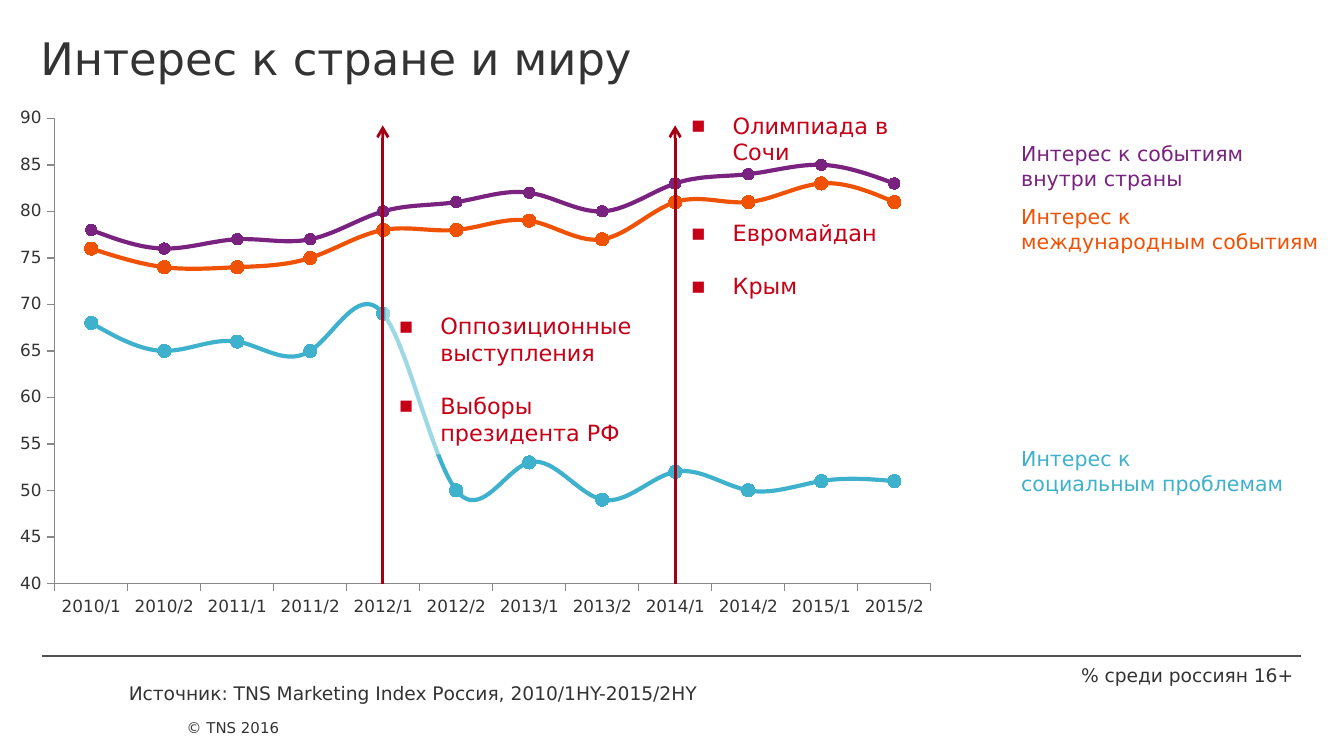
from collections import namedtuple

from lxml.etree import SubElement
from pptx import Presentation
from pptx.chart.data import CategoryChartData
from pptx.dml.color import RGBColor
from pptx.enum.chart import XL_CHART_TYPE as ChartType, XL_MARKER_STYLE as Marker, XL_TICK_MARK as Tick
from pptx.enum.shapes import MSO_CONNECTOR as Connector, MSO_SHAPE as Preset
from pptx.enum.text import MSO_ANCHOR as Anchor, PP_ALIGN as Align
from pptx.oxml import parse_xml
from pptx.oxml.ns import nsdecls, qn
from pptx.util import Inches, Pt

# The grid has 100 columns and 56.25 rows of square cells (16:9).
CELL = Inches(0.1)
COLUMNS, ROWS = 100, 56.25
FONT = "DejaVu Sans"
INK, GREY, AXIS = "333333", "525252", "888888"
PURPLE, ORANGE, BLUE = "7A2280", "EF5205", "3EB1CC"
ARROW_RED, NOTE_RED = "A40014", "C50017"

Box = namedtuple("Box", "left top width height")
Series = namedtuple("Series", "name values color marker_size")

PERIODS = [f"{year}/{half}" for year in range(2010, 2016) for half in (1, 2)]
SERIES = [
    Series("Series 1", (78, 76, 77, 77, 80, 81, 82, 80, 83, 84, 85, 83), PURPLE, 6),
    Series("Series 2", (76, 74, 74, 75, 78, 78, 79, 77, 81, 81, 83, 81), ORANGE, 7),
    Series("Series 3", (68, 65, 66, 65, 69, 50, 53, 49, 52, 50, 51, 51), BLUE, 7),
]
PLOT = Box(0.037, 0.039, 0.961, 0.892)  # shares of the chart box


def cells(*counts):
    return [round(count * CELL) for count in counts]


def rgb(color):
    return RGBColor.from_string(color)


def inside(box, share):
    """Box that takes the given shares of another box."""
    return Box(box.left + share.left * box.width, box.top + share.top * box.height,
               share.width * box.width, share.height * box.height)


def add_text(page, box, lines, size=10, color=INK, align=Align.LEFT, anchor=Anchor.TOP,
             wrap=True, insets=(1, 0.5, 1, 0.5), bullet=None, gaps=(), veil=None):
    """Text in a box; gaps are points before each line, veil is a fill's (color, opacity)."""
    if veil:
        shape = page.shapes.add_shape(Preset.RECTANGLE, *cells(*box))
        shape.shadow.inherit = False
        shape.line.fill.background()
        shape.fill.solid()
        shape.fill.fore_color.rgb = rgb(veil[0])
        fill = shape.fill._xPr.find(qn("a:solidFill"))
        SubElement(fill[0], qn("a:alpha"), val=str(veil[1] * 1000))
    else:
        shape = page.shapes.add_textbox(*cells(*box))
    frame = shape.text_frame
    frame.word_wrap = wrap
    frame.vertical_anchor = anchor
    (frame.margin_left, frame.margin_top,
     frame.margin_right, frame.margin_bottom) = cells(*insets)
    for index, line in enumerate(lines):
        para = frame.add_paragraph() if index else frame.paragraphs[0]
        para.alignment = align
        if gaps and gaps[index]:
            para.space_before = Pt(gaps[index])
        if bullet:
            props = para._p.get_or_add_pPr()
            indent = cells(3.1)[0]
            props.set("marL", str(indent))
            props.set("indent", str(-indent))
            SubElement(props, qn("a:buFont"), typeface=FONT)
            SubElement(props, qn("a:buChar"), char=bullet)
        span = para.add_run()
        span.text = line
        span.font.name, span.font.size = FONT, Pt(size)
        span.font.color.rgb = rgb(color)


def add_line(page, start, end, color, width, arrow=False):
    line = page.shapes.add_connector(Connector.STRAIGHT, *cells(*start, *end))
    line.line.color.rgb = rgb(color)
    line.line.width = Pt(width)
    if arrow:
        SubElement(line.line._get_or_add_ln(), qn("a:tailEnd"), type="arrow")
    SubElement(line._element.spPr, qn("a:effectLst"))


def style_axis(axis):
    axis.has_major_gridlines = False
    axis.major_tick_mark, axis.minor_tick_mark = Tick.OUTSIDE, Tick.NONE
    axis.format.line.color.rgb = rgb(AXIS)
    axis.format.line.width = Pt(0.75)
    font = axis.tick_labels.font
    font.name, font.size = FONT, Pt(9)
    font.color.rgb = rgb(INK)


def add_interest_chart(page, box):
    data = CategoryChartData(number_format="General")
    data.categories = PERIODS
    for series in SERIES:
        data.add_series(series.name, series.values)
    chart = page.shapes.add_chart(ChartType.LINE_MARKERS, *cells(*box), data).chart
    chart.has_legend = chart.has_title = False
    chart.font.name, chart.font.size = FONT, Pt(18)
    chart.font.color.rgb = rgb(INK)
    for axis in (chart.category_axis, chart.value_axis):
        style_axis(axis)
    scale = chart.value_axis
    scale.minimum_scale, scale.maximum_scale, scale.major_unit = 40, 90, 5

    plot = chart.plots[0]
    plot.vary_by_categories = False
    for drawn, series in zip(plot.series, SERIES):
        drawn.smooth = True
        drawn.format.line.color.rgb = rgb(series.color)
        drawn.format.line.width = Pt(2.25)
        drawn.marker.style, drawn.marker.size = Marker.CIRCLE, series.marker_size
        drawn.marker.format.fill.solid()
        drawn.marker.format.fill.fore_color.rgb = rgb(series.color)
        drawn.marker.format.line.color.rgb = rgb(series.color)

    area = chart._chartSpace.chart.plotArea
    for old in area.findall(qn("c:layout")):
        area.remove(old)
    sides = "".join(f'<c:{side} val="{share}"/>' for side, share in zip("xywh", PLOT))
    area.insert(0, parse_xml(
        f'<c:layout {nsdecls("c")}><c:manualLayout><c:layoutTarget val="inner"/>'
        f'<c:xMode val="edge"/><c:yMode val="edge"/>{sides}</c:manualLayout></c:layout>'))


def add_event(page, plot, period, notes, row, size, gaps, veil=None):
    """Arrow at a period of the plot, with a bulleted note on its right."""
    slot = plot.width / len(PERIODS)
    column = plot.left + (PERIODS.index(period) + 0.5) * slot
    add_line(page, (column, plot.top + plot.height),
             (column, plot.top + 0.015 * plot.height), ARROW_RED, 1.5, arrow=True)
    add_text(page, Box(column + 0.2, plot.top + row, *size), notes,
             size=12, color=NOTE_RED, bullet="▪", gaps=gaps, veil=veil)


def add_series_labels(page, box):
    labels = [
        (0, ["Интерес к событиям внутри страны"], PURPLE),
        (4.7, ["Интерес к", "международным событиям"], ORANGE),
        (22.7, ["Интерес к", "социальным проблемам"], BLUE),
    ]
    for row, lines, color in labels:
        width = box.width if len(lines) > 1 else 0.91 * box.width
        add_text(page, Box(box.left, box.top + row, width, 4.7), lines, size=11, color=color)


def add_footer(page, box):
    add_line(page, (box.left, box.top), (box.left + box.width, box.top), GREY, 0.75)
    add_text(page, Box(box.left + 9.8, box.top + 4.1, 9.1, 2.4), ["© TNS 2016"],
             size=8, anchor=Anchor.BOTTOM, wrap=False)
    add_text(page, Box(box.left + 5.5, box.top + 0.8, 60.8, 4),
             ["Источник: TNS Marketing Index Россия, 2010/1HY-2015/2HY"], anchor=Anchor.MIDDLE)
    add_text(page, Box(box.left + 76.1, box.top + 0.1, 18, 2.7),
             ["% среди россиян 16+"], align=Align.RIGHT, wrap=False)


def main():
    deck = Presentation()
    deck.slide_width, deck.slide_height = cells(COLUMNS, ROWS)
    page = deck.slides.add_slide(deck.slide_layouts[6])

    add_text(page, Box(0, 0, COLUMNS, 8.9), ["Интерес к стране и миру"],
             size=24, insets=(3, 2.3, 3, 0))
    chart_box = Box(1.5, 7.3, 67.9, 38.8)
    add_interest_chart(page, chart_box)
    add_series_labels(page, Box(75, 10, 24.4, 27.4))

    plot = inside(chart_box, PLOT)
    add_event(page, plot, "2012/1", ["Оппозиционные выступления", "Выборы президента РФ"],
              row=13.9, size=(20.4, 11.1), gaps=(0, 14), veil=("FFFFFF", 50))
    add_event(page, plot, "2014/1", ["Олимпиада в Сочи", "Евромайдан", "Крым"],
              row=-1, size=(20.3, 15.1), gaps=(0, 29, 14))
    add_footer(page, Box(3.1, 48.8, 93.7, 6.5))
    deck.save("out.pptx")


if __name__ == "__main__":
    main()
